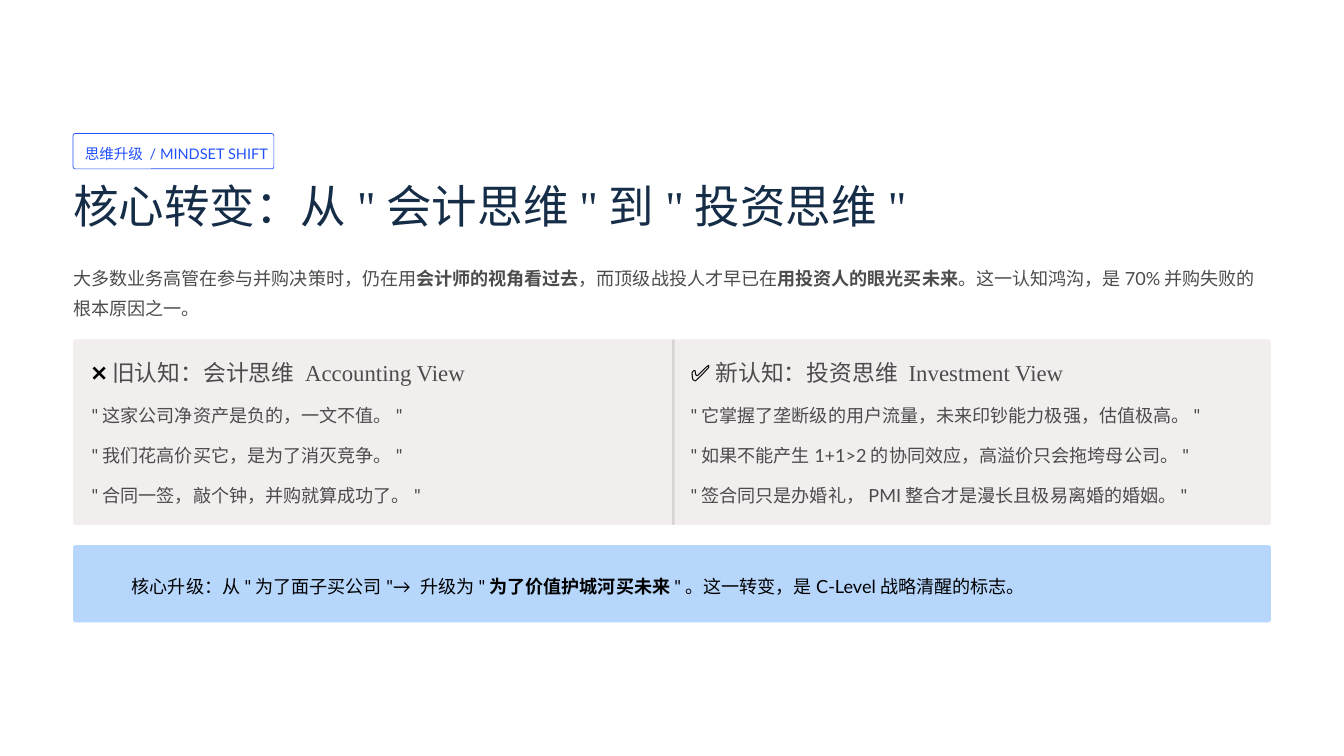
from dataclasses import dataclass

from lxml.etree import SubElement
from pptx import Presentation
from pptx.dml.color import RGBColor
from pptx.enum.shapes import MSO_SHAPE as Preset
from pptx.enum.text import MSO_ANCHOR, MSO_AUTO_SIZE, PP_ALIGN
from pptx.oxml.ns import qn
from pptx.shapes.base import BaseShape
from pptx.slide import Slide
from pptx.util import Inches, Pt

BLUE = RGBColor(0x21, 0x50, 0xFE)
NAVY = RGBColor(0x15, 0x2D, 0x47)
GRAY = RGBColor(0x4C, 0x4C, 0x4D)
BLACK = RGBColor(0, 0, 0)
PANEL = RGBColor(0xF2, 0xEE, 0xEE)
RULE = RGBColor(0xD8, 0xD4, 0xD4)
SKY = RGBColor(0xB6, 0xD6, 0xFC)
SANS, SERIF = "Lato", "Times New Roman"

# Lengths are percentages of the slide's width and height
WIDTH, HEIGHT = Inches(16), Inches(9)
MARGIN = 5.44
CONTENT = 100 - 2 * MARGIN
COLUMN = CONTENT / 2
PAD = 1.38
PANEL_TOP, PANEL_HEIGHT = 44.89, 24.56


@dataclass(frozen=True)
class Area:
    left: float
    top: float
    width: float
    height: float

    def emu(self) -> tuple[int, int, int, int]:
        return (round(self.left * WIDTH / 100), round(self.top * HEIGHT / 100),
                round(self.width * WIDTH / 100), round(self.height * HEIGHT / 100))


@dataclass(frozen=True)
class Style:
    font: str
    size: float
    leading: float
    color: RGBColor
    gap: float = 0


@dataclass(frozen=True)
class Span:
    text: str
    bold: bool = False
    color: RGBColor | None = None


@dataclass(frozen=True)
class View:
    icon: str
    heading: str
    quotes: tuple[str, ...]


BADGE = Style(SANS, 12.5, 20, BLUE)
TITLE = Style(SERIF, 39, 48.5, NAVY)
HEADING = Style(SERIF, 19.5, 24, GRAY)
BODY = Style(SANS, 15.5, 25, GRAY)
QUOTES = Style(SANS, 15.5, 25, GRAY, gap=9.2)
CALLOUT = Style(SANS, 15.5, 25, BLACK)

VIEWS = (
    View("❌", " 旧认知：会计思维 Accounting View", (
        '"这家公司净资产是负的，一文不值。"',
        '"我们花高价买它，是为了消灭竞争。"',
        '"合同一签，敲个钟，并购就算成功了。"')),
    View("✅", " 新认知：投资思维 Investment View", (
        '"它掌握了垄断级的用户流量，未来印钞能力极强，估值极高。"',
        '"如果不能产生1+1>2的协同效应，高溢价只会拖垮母公司。"',
        '"签合同只是办婚礼，PMI整合才是漫长且极易离婚的婚姻。"')),
)


def write(box: BaseShape, style: Style, lines: list[list[Span]], wrap: bool = False) -> None:
    """Fill a text box or placeholder with plain, left-aligned lines."""
    frame = box.text_frame
    frame.auto_size = MSO_AUTO_SIZE.NONE
    frame.word_wrap = wrap
    frame.vertical_anchor = MSO_ANCHOR.TOP
    frame.margin_left = frame.margin_top = frame.margin_right = frame.margin_bottom = 0
    for index, spans in enumerate(lines):
        line = frame.add_paragraph() if index else frame.paragraphs[0]
        line.alignment = PP_ALIGN.LEFT
        line.line_spacing = Pt(style.leading)
        line.space_before = Pt(style.gap if index else 0)
        line.space_after = Pt(0)
        properties = line._p.get_or_add_pPr()
        properties.set("marL", "0")
        properties.set("indent", "0")
        SubElement(properties, qn("a:buNone"))
        line.font.name = style.font
        line.font.size = Pt(style.size)
        line.font.color.rgb = style.color
        line.font.bold = False
        for span in spans:
            run = line.add_run()
            run.text = span.text
            if span.bold:
                run.font.bold = True
            if span.color is not None:
                run.font.color.rgb = span.color


def add_text(slide: Slide, area: Area, style: Style, spans: list[Span], wrap: bool = False) -> None:
    write(slide.shapes.add_textbox(*area.emu()), style, [spans], wrap)


def fill_placeholder(slide: Slide, index: int, area: Area, style: Style,
                     lines: list[list[Span]]) -> None:
    """Place a template placeholder on top of what is already drawn."""
    holder = next(p for p in slide.placeholders if p.placeholder_format.idx == index)
    slide.shapes.element.append(holder.element)
    holder.left, holder.top, holder.width, holder.height = area.emu()
    write(holder, style, lines)


def add_panel(slide: Slide, area: Area, corner: float, fill: RGBColor | None = None,
              outline: RGBColor | None = None) -> None:
    panel = slide.shapes.add_shape(Preset.ROUNDED_RECTANGLE, *area.emu())
    panel.adjustments[0] = corner
    panel.shadow.inherit = False
    if fill is None:
        panel.fill.background()
    else:
        panel.fill.solid()
        panel.fill.fore_color.rgb = fill
    if outline is None:
        panel.line.fill.background()
    else:
        panel.line.color.rgb = outline
        panel.line.width = Pt(0.6)


def add_view(slide: Slide, number: int, view: View) -> None:
    """One column of the comparison: heading above its quotes."""
    left, width = MARGIN + number * COLUMN + PAD, COLUMN - 2 * PAD
    fill_placeholder(slide, 1 + 2 * number, Area(left, 47.33, width, 3.78), HEADING,
                     [[Span(view.icon, color=BLACK), Span(view.heading)]])
    fill_placeholder(slide, 2 + 2 * number, Area(left, 52.56, width, 14.44), QUOTES,
                     [[Span(quote)] for quote in view.quotes])


def main() -> None:
    deck = Presentation()
    deck.slide_width, deck.slide_height = WIDTH, HEIGHT
    comparison = deck.slide_layouts.get_by_name("Comparison")
    slide = deck.slides.add_slide(comparison)

    # Badge and title
    add_panel(slide, Area(MARGIN, 17.67, 14.94, 4.67), 0.06, outline=BLUE)
    add_text(slide, Area(6.31, 18.44, 13.19, 3.11), BADGE, [Span("思维升级 / MINDSET SHIFT")])
    fill_placeholder(slide, 0, Area(MARGIN, 23.33, CONTENT, 7.56), TITLE,
                     [[Span('核心转变：从"会计思维"到"投资思维"')]])

    # Introduction
    add_text(slide, Area(MARGIN, 34.44, CONTENT, 7.67), BODY, [
        Span("大多数业务高管在参与并购决策时，仍在用"),
        Span("会计师的视角看过去", bold=True),
        Span("，而顶级战投人才早已在"),
        Span("用投资人的眼光买未来", bold=True),
        Span("。这一认知鸿沟，是70%并购失败的根本原因之一。"),
    ], wrap=True)

    # Comparison of the two views
    add_panel(slide, Area(MARGIN, PANEL_TOP, CONTENT, PANEL_HEIGHT), 0.015, fill=PANEL)
    add_panel(slide, Area(MARGIN + COLUMN, PANEL_TOP, 0.19, PANEL_HEIGHT), 0.5, fill=RULE)
    for number, view in enumerate(VIEWS):
        add_view(slide, number, view)

    # Callout
    add_panel(slide, Area(MARGIN, 72.11, CONTENT, 10.22), 0.035, fill=SKY)
    add_text(slide, Area(9.81, 75.11, 83.38, 3.89), CALLOUT, [
        Span('核心升级：从"为了面子买公司"→ 升级为"'),
        Span("为了价值护城河买未来", bold=True),
        Span('"。这一转变，是C-Level战略清醒的标志。'),
    ])

    deck.save("out.pptx")


if __name__ == "__main__":
    main()
